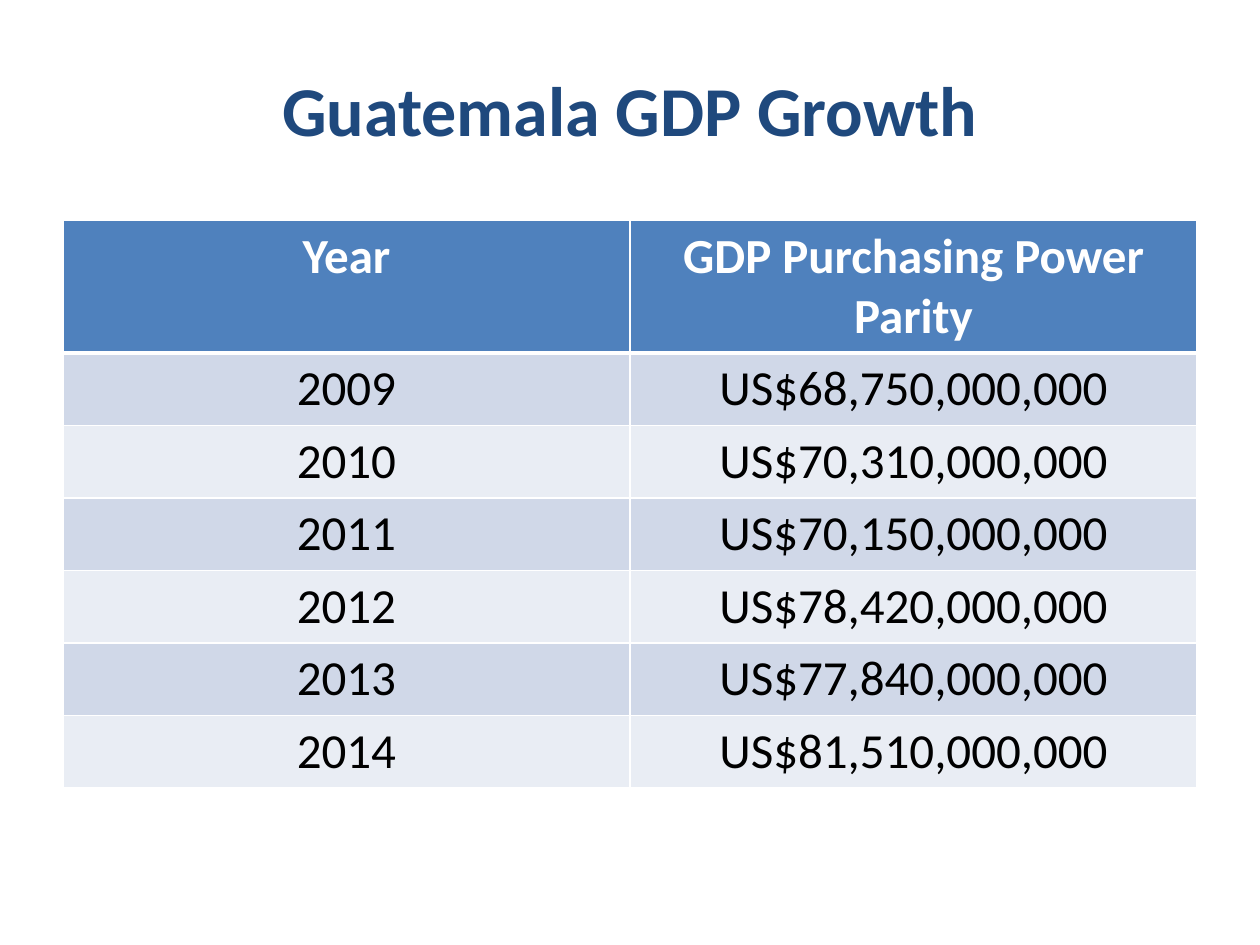
import pptx
import pptx.util
import pptx.dml.color
import pptx.enum.text
import pptx.oxml
import pptx.oxml.ns
from pptx.util import Inches

COLORS = {
    "title": "1F497D",
    "header": "4F81BD",
    "band_dark": "D0D8E8",
    "band_light": "E9EDF4",
    "white": "FFFFFF",
    "black": "000000",
}

GDP_ROWS = [
    ("Year", "GDP Purchasing Power Parity"),
    ("2009", "US$68,750,000,000"),
    ("2010", "US$70,310,000,000"),
    ("2011", "US$70,150,000,000"),
    ("2012", "US$78,420,000,000"),
    ("2013", "US$77,840,000,000"),
    ("2014", "US$81,510,000,000"),
]


class SlideBuilder:
    font = "Calibri"

    def __init__(self, slide):
        self.s = slide

    def color(self, name):
        return pptx.dml.color.RGBColor.from_string(COLORS[name])

    def format(self, p, size, color, bold):
        p.alignment = pptx.enum.text.PP_ALIGN.CENTER
        p.font.name = self.font
        p.font.size = pptx.util.Pt(size)
        p.font.bold = bold
        p.font.color.rgb = self.color(color)

    def title(self, text, left, top, width, height):
        sp = self.s.shapes.title
        sp.left, sp.top = Inches(left), Inches(top)
        sp.width, sp.height = Inches(width), Inches(height)
        tf = sp.text_frame
        tf.text = text
        tf.word_wrap = True
        tf.vertical_anchor = pptx.enum.text.MSO_ANCHOR.MIDDLE
        p = tf.paragraphs[0]
        p.line_spacing = 0.8
        self.format(p, 40, "title", True)

    def borders(self, cell, bottom):
        tc_pr = cell._tc.get_or_add_tcPr()
        widths = {"lnL": 1, "lnR": 1, "lnT": 1, "lnB": bottom}
        for i, (tag, width) in enumerate(widths.items()):
            ln = pptx.oxml.parse_xml(
                f'<a:{tag} {pptx.oxml.ns.nsdecls("a")} w="{pptx.util.Pt(width)}">'
                f'<a:solidFill><a:srgbClr val="{COLORS["white"]}"/></a:solidFill>'
                f"</a:{tag}>"
            )
            tc_pr.insert(i, ln)

    def cell(self, cell, text, fill, color, bold, bottom):
        cell.text = text
        cell.fill.solid()
        cell.fill.fore_color.rgb = self.color(fill)
        self.format(cell.text_frame.paragraphs[0], 28, color, bold)
        self.borders(cell, bottom)

    def table(self, rows, left, top, width, header_height, row_height):
        height = header_height + row_height * (len(rows) - 1)
        table = self.s.shapes.add_table(
            len(rows), len(rows[0]),
            Inches(left), Inches(top), Inches(width), Inches(height),
        ).table
        for i, values in enumerate(rows):
            header = i == 0
            table.rows[i].height = Inches(header_height if header else row_height)
            band = "band_dark" if i % 2 else "band_light"
            for j, text in enumerate(values):
                self.cell(
                    table.cell(i, j), text,
                    fill="header" if header else band,
                    color="white" if header else "black",
                    bold=header,
                    bottom=3 if i == 0 else 1,
                )
        for j in range(len(rows[0])):
            for edge in table.cell(1, j)._tc.tcPr.findall(pptx.oxml.ns.qn("a:lnT")):
                edge.set("w", str(pptx.util.Pt(3)))


def main():
    prs = pptx.Presentation()
    prs.slide_width, prs.slide_height = Inches(10), Inches(7.5)
    builder = SlideBuilder(prs.slides.add_slide(prs.slide_layouts[5]))
    builder.title("Guatemala GDP Growth", 0.5, 0.3, 9, 1.25)
    builder.table(GDP_ROWS, 0.5, 1.75, 9, header_height=1.04, row_height=0.57)
    prs.save("out.pptx")


if __name__ == "__main__":
    main()
